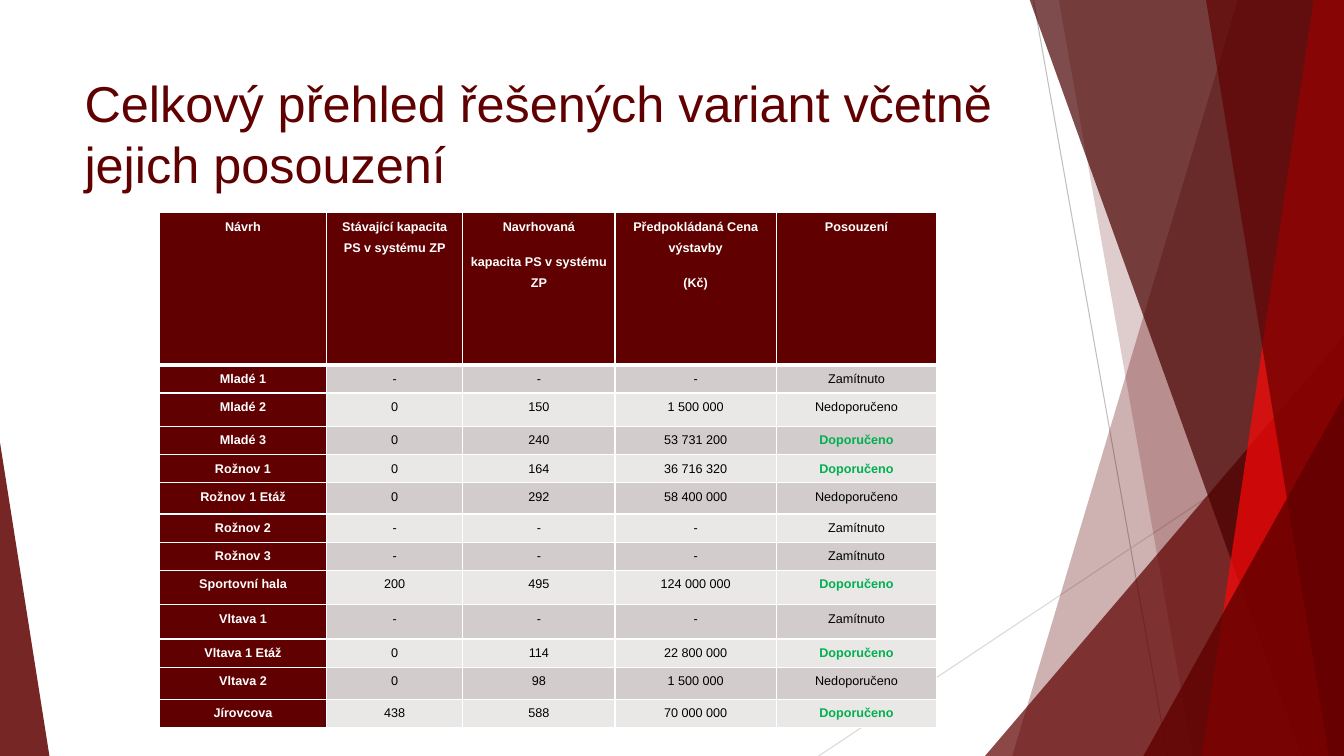
from lxml.etree import SubElement
from pptx import Presentation
from pptx.dml.color import RGBColor
from pptx.enum.shapes import MSO_CONNECTOR, MSO_SHAPE
from pptx.enum.text import MSO_ANCHOR, PP_ALIGN
from pptx.oxml.ns import qn
from pptx.util import Inches, Pt

COLORS = {
    "maroon": "600000",
    "dark": "480000",
    "red": "FF0707",
    "green": "00B050",
    "white": "FFFFFF",
    "black": "000000",
    "band_dark": "D2CCCC",
    "band_light": "EAE7E7",
    "line_dark": "BFBFBF",
    "line_light": "D9D9D9",
}
WIDTH, HEIGHT, TOP = 13.33, 7.5, -0.01

HEADER = [
    ["Návrh"],
    ["Stávající kapacita PS v systému ZP"],
    ["Navrhovaná", "kapacita PS v systému ZP"],
    ["Předpokládaná Cena výstavby", "(Kč)"],
    ["Posouzení"],
]
VARIANTS = [
    ("Mladé 1", "-", "-", "-", "Zamítnuto"),
    ("Mladé 2", "0", "150", "1 500 000", "Nedoporučeno"),
    ("Mladé 3", "0", "240", "53 731 200", "Doporučeno"),
    ("Rožnov 1", "0", "164", "36 716 320", "Doporučeno"),
    ("Rožnov 1 Etáž", "0", "292", "58 400 000", "Nedoporučeno"),
    ("Rožnov 2", "-", "-", "-", "Zamítnuto"),
    ("Rožnov 3", "-", "-", "-", "Zamítnuto"),
    ("Sportovní hala", "200", "495", "124 000 000", "Doporučeno"),
    ("Vltava 1", "-", "-", "-", "Zamítnuto"),
    ("Vltava 1 Etáž", "0", "114", "22 800 000", "Doporučeno"),
    ("Vltava 2", "0", "98", "1 500 000", "Nedoporučeno"),
    ("Jírovcova", "438", "588", "70 000 000", "Doporučeno"),
]
COLUMN_WIDTHS = [1.66, 1.35, 1.51, 1.6, 1.59]
ROW_HEIGHTS = [1.51, 0.28, 0.33, 0.28, 0.28, 0.31, 0.28, 0.28, 0.34, 0.34, 0.28, 0.32, 0.28]


class SlideBuilder:
    def __init__(self, slide, font="Arial"):
        self.slide = slide
        self.font = font

    def color(self, name):
        return RGBColor.from_string(COLORS[name])

    def line(self, start, end, color):
        connector = self.slide.shapes.add_connector(
            MSO_CONNECTOR.STRAIGHT, *map(Inches, start + end))
        connector.line.color.rgb = self.color(color)
        connector.line.width = Pt(0.75)
        SubElement(connector._element.spPr, qn("a:effectLst"))

    def paint(self, shape, color, opacity):
        shape.shadow.inherit = False
        shape.fill.solid()
        shape.fill.fore_color.rgb = self.color(color)
        shape.line.fill.background()
        color_element = shape._element.spPr.find(qn("a:solidFill"))[0]
        SubElement(color_element, qn("a:alpha"), val=str(opacity * 1000))

    def right_panel(self, top_x, bottom_x, color, opacity):
        builder = self.slide.shapes.build_freeform(Inches(top_x), Inches(TOP), scale=1.0)
        corners = [(WIDTH, TOP), (WIDTH, HEIGHT), (bottom_x, HEIGHT)]
        builder.add_line_segments([(Inches(x), Inches(y)) for x, y in corners], close=True)
        self.paint(builder.convert_to_shape(), color, opacity)

    def triangle(self, left, top, width, apex, opacity):
        shape = self.slide.shapes.add_shape(
            MSO_SHAPE.ISOSCELES_TRIANGLE, Inches(left), Inches(top),
            Inches(width), Inches(HEIGHT - top))
        shape.adjustments[0] = apex
        self.paint(shape, "maroon", opacity)

    def add_run(self, paragraph, text, size, color, bold=False):
        run = paragraph.add_run()
        run.text = text
        run.font.name = self.font
        run.font.size = Pt(size)
        run.font.bold = bold
        run.font.color.rgb = self.color(color)

    def title(self, text, left, top, width, height):
        box = self.slide.shapes.add_textbox(*map(Inches, (left, top, width, height)))
        box.text_frame.word_wrap = True
        box.text_frame.vertical_anchor = MSO_ANCHOR.TOP
        self.add_run(box.text_frame.paragraphs[0], text, 36, "maroon")

    def border(self, cell, side, width):
        line = SubElement(cell._tc.get_or_add_tcPr(), qn(f"a:ln{side}"), w=str(Pt(width)))
        fill = SubElement(line, qn("a:solidFill"))
        SubElement(fill, qn("a:srgbClr"), val=COLORS["white"])

    def cell(self, cell, texts, fill, color, bold, top_border, bottom_border):
        cell.margin_left = cell.margin_right = Inches(0.06)
        cell.margin_top = cell.margin_bottom = 0
        borders = {"L": 1, "R": 1, "T": top_border, "B": bottom_border}
        for side, width in borders.items():
            self.border(cell, side, width)
        cell.fill.solid()
        cell.fill.fore_color.rgb = self.color(fill)
        frame = cell.text_frame
        for index, text in enumerate(texts):
            paragraph = frame.add_paragraph() if index else frame.paragraphs[0]
            paragraph.alignment = PP_ALIGN.CENTER
            paragraph.line_spacing = 1.5
            paragraph.space_after = Pt(10)
            self.add_run(paragraph, text, 9, color, bold)

    def table(self, left, top):
        rows = [HEADER] + [[[text] for text in variant] for variant in VARIANTS]
        table = self.slide.shapes.add_table(
            len(rows), len(HEADER), Inches(left), Inches(top),
            Inches(sum(COLUMN_WIDTHS)), Inches(sum(ROW_HEIGHTS))).table
        for column, width in zip(table.columns, COLUMN_WIDTHS):
            column.width = Inches(width)
        for row, height in zip(table.rows, ROW_HEIGHTS):
            row.height = Inches(height)
        for row_index, row in enumerate(rows):
            band = "band_dark" if row_index % 2 else "band_light"
            for column_index, texts in enumerate(row):
                heading = row_index == 0 or column_index == 0
                recommended = texts == ["Doporučeno"]
                color = "white" if heading else "green" if recommended else "black"
                self.cell(
                    table.cell(row_index, column_index), texts,
                    "maroon" if heading else band, color, heading or recommended,
                    top_border=3 if row_index == 1 else 1,
                    bottom_border=3 if row_index == 0 else 1)


def main():
    presentation = Presentation()
    presentation.slide_width = Inches(WIDTH)
    presentation.slide_height = Inches(HEIGHT)
    builder = SlideBuilder(presentation.slides.add_slide(presentation.slide_layouts[6]))

    builder.line((10.25, 0), (11.58, HEIGHT), "line_dark")
    builder.line((WIDTH, 4.03), (8.12, HEIGHT), "line_light")
    builder.right_panel(12.28, 10.04, "maroon", 30)
    builder.right_panel(10.5, 11.83, "maroon", 20)
    builder.triangle(9.77, 3.33, 3.56, apex=1, opacity=72)
    builder.right_panel(10.21, 12.91, "dark", 70)
    builder.right_panel(13.03, 11.92, "red", 70)
    builder.right_panel(11.96, 13.18, "maroon", 65)
    builder.triangle(11.34, 3.93, 1.99, apex=1, opacity=80)
    builder.triangle(0, 4.39, 0.49, apex=0, opacity=85)

    builder.title("Celkový přehled řešených variant včetně jejich posouzení", 0.74, 0.67, 9.4, 1.44)
    builder.table(1.58, 2.11)
    presentation.save("out.pptx")


if __name__ == "__main__":
    main()
